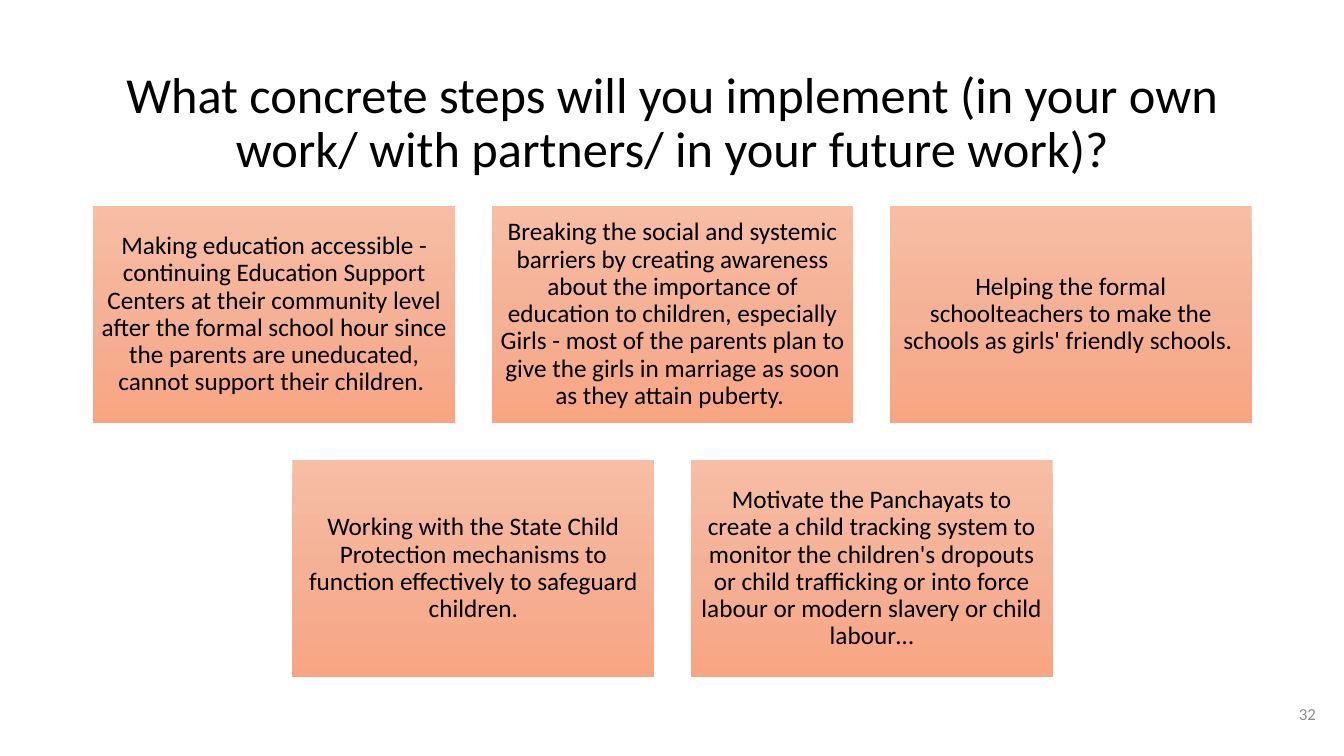
from copy import deepcopy
from dataclasses import dataclass

from pptx import Presentation
from pptx.dml.color import RGBColor
from pptx.enum.shapes import MSO_SHAPE
from pptx.enum.text import MSO_ANCHOR, MSO_AUTO_SIZE, PP_ALIGN
from pptx.util import Inches, Pt

RECT = MSO_SHAPE.RECTANGLE
MIDDLE = MSO_ANCHOR.MIDDLE
NO_FIT = MSO_AUTO_SIZE.NONE
CENTER, RIGHT = PP_ALIGN.CENTER, PP_ALIGN.RIGHT


@dataclass(frozen=True)
class Theme:
    font: str = "Calibri"
    text: str = "000000"
    muted: str = "8C8C8C"
    gradient: tuple = ((0, "F7BDA5"), (0.5, "F5B196"), (1, "F8A582"))
    title_size: int = 36
    card_size: int = 18
    number_size: int = 12


class SlideBuilder:
    def __init__(self, prs, theme):
        self.theme = theme
        self.s = prs.slides.add_slide(prs.slide_layouts[5])

    def set_text(self, sp, text, size, color, align=CENTER, inset=0.1, spacing=0.9):
        tf = sp.text_frame
        margins = {f"margin_{side}": Inches(inset) for side in ("left", "top", "right", "bottom")}
        frame = {"word_wrap": True, "auto_size": NO_FIT, "vertical_anchor": MIDDLE, **margins}
        for name, value in frame.items():
            setattr(tf, name, value)
        p = tf.paragraphs[0]
        for name, value in {"alignment": align, "line_spacing": spacing}.items():
            setattr(p, name, value)
        r = p.add_run()
        r.text = text
        for name, value in {"name": self.theme.font, "size": Pt(size)}.items():
            setattr(r.font, name, value)
        r.font.color.rgb = RGBColor.from_string(color)

    def title(self, text, left, top, width, height):
        sp = self.s.shapes.title
        box = {"left": left, "top": top, "width": width, "height": height}
        for name, value in box.items():
            setattr(sp, name, Inches(value))
        self.set_text(sp, text, self.theme.title_size, self.theme.text)

    def card(self, text, left, top, width, height):
        sp = self.s.shapes.add_shape(RECT, *map(Inches, (left, top, width, height)))
        sp.shadow.inherit = False
        sp.line.fill.background()
        self.gradient(sp)
        self.set_text(sp, text, self.theme.card_size, self.theme.text, inset=0.07)

    def gradient(self, sp):
        fill = sp.fill
        fill.gradient()
        fill.gradient_angle = 270
        stops = sp.element.spPr.xpath("./a:gradFill/a:gsLst")[0]
        stops.append(deepcopy(stops[-1]))
        for stop, (position, color) in zip(fill.gradient_stops, self.theme.gradient):
            stop.position = position
            stop.color.rgb = RGBColor.from_string(color)

    def number(self, text, left, top, width, height):
        sp = self.s.shapes.add_textbox(*map(Inches, (left, top, width, height)))
        self.set_text(sp, text, self.theme.number_size, self.theme.muted, RIGHT, spacing=1.0)


STEP_ROWS = (
    (
        "Making education accessible - continuing Education Support Centers at their "
        "community level after the formal school hour since the parents are uneducated, "
        "cannot support their children. ",
        "Breaking the social and systemic barriers by creating awareness about the "
        "importance of education to children, especially Girls - most of the parents plan "
        "to give the girls in marriage as soon as they attain puberty. ",
        "Helping the formal schoolteachers to make the schools as girls' friendly schools. ",
    ),
    (
        "Working with the State Child Protection mechanisms to function effectively to "
        "safeguard children.",
        "Motivate the Panchayats to create a child tracking system to monitor the "
        "children's dropouts or child trafficking or into force labour or modern slavery "
        "or child labour…",
    ),
)
CENTER_X, CARDS_TOP = 6.67, 2.04
CARD_W, CARD_H, GAP = 3.59, 2.16, 0.36


def main():
    prs = Presentation()
    prs.slide_width, prs.slide_height = Inches(13.33), Inches(7.5)
    slide = SlideBuilder(prs, Theme())
    slide.title(
        "What concrete steps will you implement (in your own work/ with partners/ "
        "in your future work)?",
        0.92, 0.61, 11.5, 1.24,
    )
    for row, steps in enumerate(STEP_ROWS):
        row_width = len(steps) * (CARD_W + GAP) - GAP
        top = CARDS_TOP + row * (CARD_H + GAP)
        for col, text in enumerate(steps):
            left = CENTER_X - row_width / 2 + col * (CARD_W + GAP)
            slide.card(text, left, top, CARD_W, CARD_H)
    slide.number("32", 12.35, 6.8, 0.8, 0.57)
    prs.save("out.pptx")


if __name__ == "__main__":
    main()
